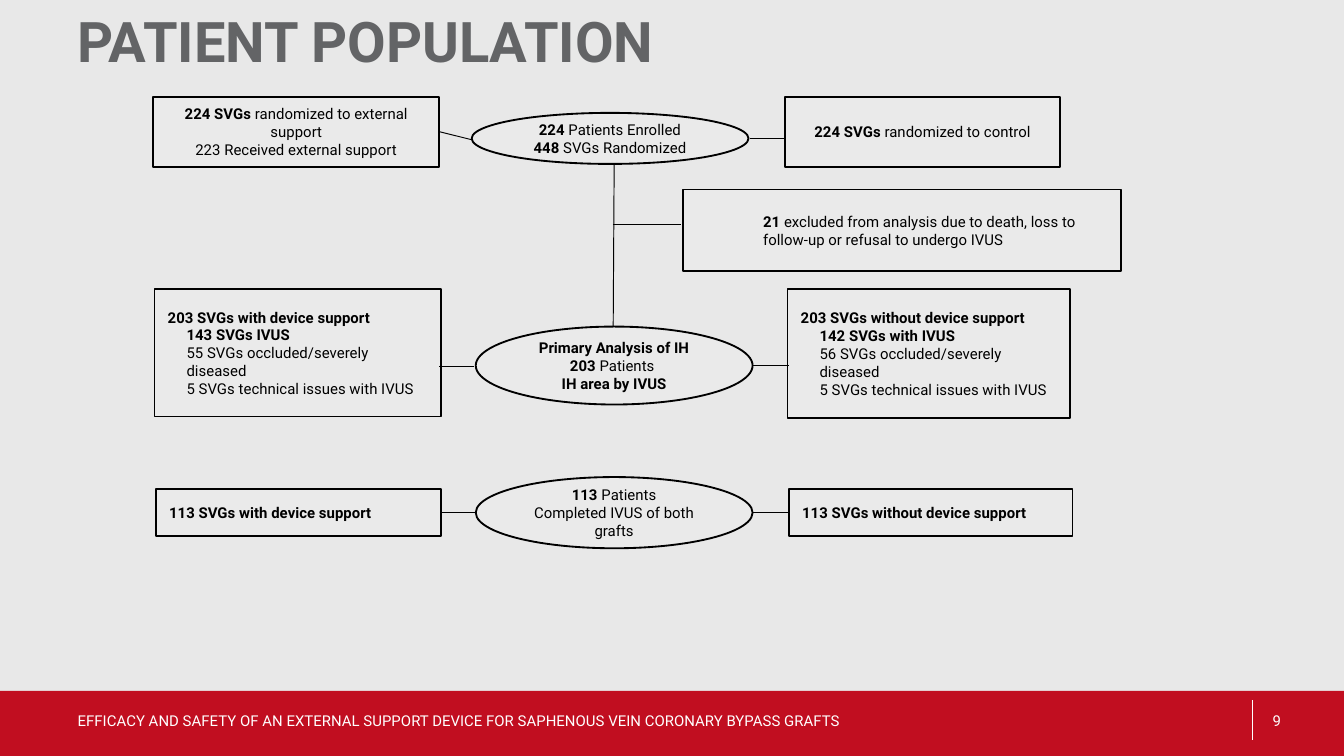
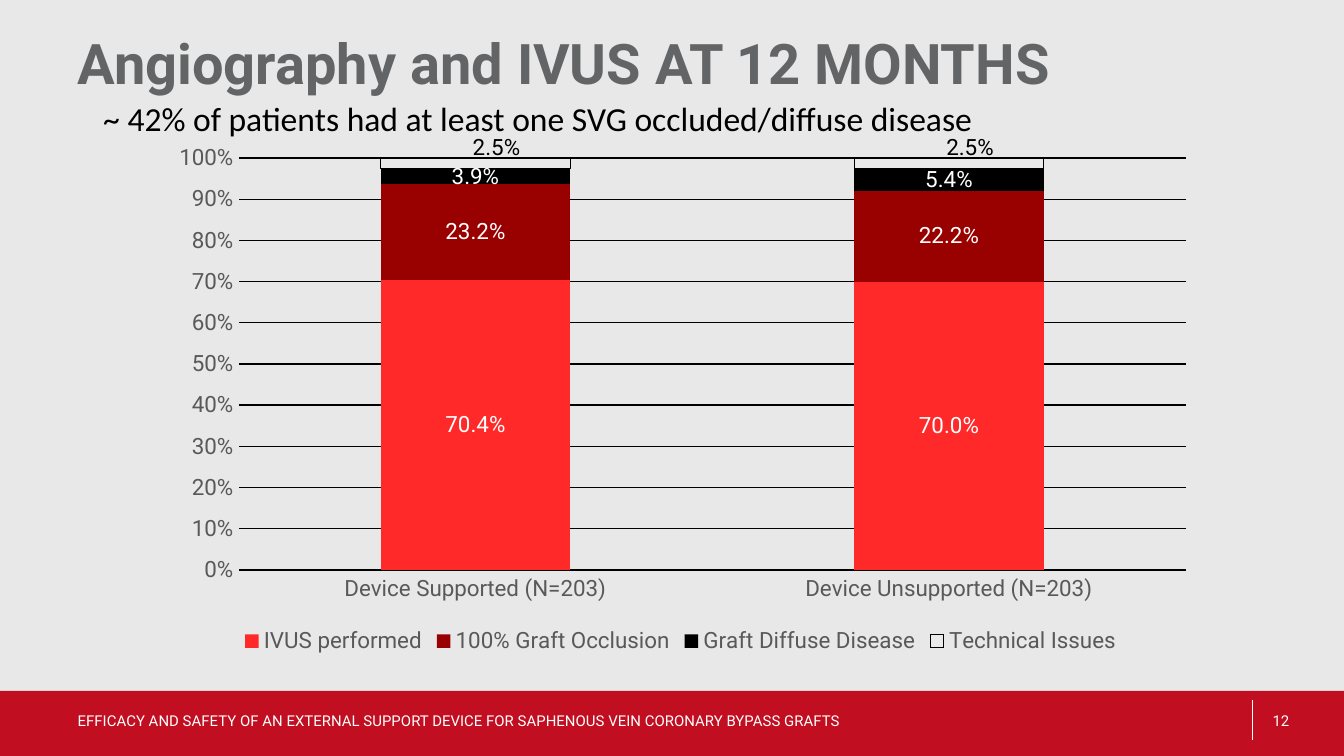
import pptx
import pptx.chart.data
import pptx.dml.color
import pptx.enum.chart
import pptx.enum.shapes
import pptx.enum.text
import pptx.oxml
import pptx.oxml.ns
import pptx.util

PX = 4572  # EMU per px, 200 px to the inch
WIDTH, HEIGHT = 2000, 1125
FONT = "Roboto"
BACKGROUND, BAND, TITLE = "E8E8E8", "C10E20", "636466"
NODE, BLACK, WHITE, AXIS_TEXT = "EAEAEA", "000000", "FFFFFF", "595959"
FOOTER = ("EFFICACY AND SAFETY OF AN EXTERNAL SUPPORT DEVICE FOR "
          "SAPHENOUS VEIN CORONARY BYPASS GRAFTS")
SHAPE = pptx.enum.shapes.MSO_SHAPE
ALIGN = pptx.enum.text.PP_ALIGN
ANCHOR = pptx.enum.text.MSO_ANCHOR
TOP, LEFT, BOTTOM, RIGHT = range(4)


def px(*lengths):
    return [pptx.util.Emu(n * PX) for n in lengths]


def rgb(value):
    return pptx.dml.color.RGBColor.from_string(value)


def style_font(font, size, color, name=FONT):
    font.size = pptx.util.Pt(size)
    font.name = name
    font.color.rgb = rgb(color)


def set_layout(parent, index, **fractions):
    """Place a chart part by hand, as fractions of the chart."""
    for old in parent.findall(pptx.oxml.ns.qn("c:layout")):
        parent.remove(old)
    parts = "".join(f'<c:{k} val="{v}"/>' for k, v in fractions.items())
    parent.insert(index, pptx.oxml.parse_xml(
        f'<c:layout {pptx.oxml.ns.nsdecls("c")}><c:manualLayout>{parts}'
        '</c:manualLayout></c:layout>'))


class Deck:
    def __init__(self):
        self.prs = pptx.Presentation()
        self.prs.slide_width, self.prs.slide_height = px(WIDTH, HEIGHT)
        self.s = None

    def slide(self, number, title, title_box):
        self.s = self.prs.slides.add_slide(self.prs.slide_layouts[6])
        fill = self.s.background.fill
        fill.solid()
        fill.fore_color.rgb = rgb(BACKGROUND)
        self.shape(SHAPE.RECTANGLE, (0, 1028, WIDTH, 97), BAND)
        self.line((1864, 1042), (1864, 1102), WHITE)
        p = self.text(title_box, title, 30, TITLE, anchor=ANCHOR.TOP)
        p.line_spacing = pptx.util.Pt(30)
        p.runs[0].font.bold = True
        self.text((96, 1042, 1204, 60), FOOTER, 8, WHITE)
        self.text((1874, 1042, 126, 60), str(number), 8, WHITE)

    def text(self, box, text, size, color, name=FONT, anchor=ANCHOR.MIDDLE, wrap=True):
        tf = self.s.shapes.add_textbox(*px(*box)).text_frame
        tf.word_wrap = wrap
        tf.vertical_anchor = anchor
        tf.text = text
        p = tf.paragraphs[0]
        style_font(p.runs[0].font, size, color, name)
        return p

    def shape(self, kind, box, color, outline=None):
        sp = self.s.shapes.add_shape(kind, *px(*box))
        sp.shadow.inherit = False
        sp.fill.solid()
        sp.fill.fore_color.rgb = rgb(color)
        if outline:
            sp.line.color.rgb = rgb(outline)
            sp.line.width = pptx.util.Pt(1)
        else:
            sp.line.fill.background()
        return sp

    def node(self, kind, box, lines, align=ALIGN.CENTER, first=0, rest=0):
        """Outlined flowchart node; *asterisks* mark bold, first and rest are indents."""
        sp = self.shape(kind, box, NODE, BLACK)
        tf = sp.text_frame
        tf.word_wrap = True
        tf.vertical_anchor = ANCHOR.MIDDLE
        for i, line in enumerate(lines):
            p = tf.add_paragraph() if i else tf.paragraphs[0]
            p.alignment = align
            p._p.get_or_add_pPr().set("marL", str((rest if i else first) * PX))
            for j, part in enumerate(line.split("*")):
                if part:
                    r = p.add_run()
                    r.text = part
                    r.font.bold = j % 2 == 1
                    style_font(r.font, 8, BLACK)
        return sp

    def oval(self, box, *lines):
        return self.node(SHAPE.OVAL, box, lines)

    def box(self, box, *lines, **options):
        return self.node(SHAPE.RECTANGLE, box, lines, **options)

    def line(self, start, end, color=BLACK, begin=None, finish=None):
        """Straight line; begin and finish are (shape, side) pairs to join."""
        c = self.s.shapes.add_connector(
            pptx.enum.shapes.MSO_CONNECTOR.STRAIGHT, *px(*start, *end))
        c.line.color.rgb = rgb(color)
        c.line.width = pptx.util.Pt(0.5)
        c._element.spPr.append(pptx.oxml.parse_xml(
            f'<a:effectLst {pptx.oxml.ns.nsdecls("a")}/>'))
        if begin:
            c.begin_connect(*begin)
        if finish:
            c.end_connect(*finish)

    def stacked_chart(self, box, categories, series):
        """100% stacked columns; series rows are name, values, fill, label colour."""
        data = pptx.chart.data.CategoryChartData(number_format="0.0%")
        data.categories = categories
        for name, values, _, _ in series:
            data.add_series(name, values)
        chart = self.s.shapes.add_chart(
            pptx.enum.chart.XL_CHART_TYPE.COLUMN_STACKED_100, *px(*box), data).chart
        chart.has_title = False
        style_font(chart.font, 12, BLACK)
        chart.has_legend = True
        chart.legend.position = pptx.enum.chart.XL_LEGEND_POSITION.BOTTOM
        chart.legend.include_in_layout = False
        style_font(chart.legend.font, 12, AXIS_TEXT)
        for axis in (chart.category_axis, chart.value_axis):
            axis.major_tick_mark = pptx.enum.chart.XL_TICK_MARK.NONE
            axis.minor_tick_mark = pptx.enum.chart.XL_TICK_MARK.NONE
            axis.format.line.fill.background()
            style_font(axis.tick_labels.font, 12, AXIS_TEXT)
        axis = chart.value_axis
        axis.minimum_scale, axis.maximum_scale, axis.major_unit = 0, 1, 0.1
        axis.tick_labels.number_format = "0%"
        axis.tick_labels.number_format_is_linked = False
        axis.has_major_gridlines = True
        grid = axis.major_gridlines.format.line
        grid.color.rgb = rgb(BLACK)
        grid.width = pptx.util.Pt(0.75)
        plot = chart.plots[0]
        plot.gap_width, plot.overlap = 150, 100
        plot.vary_by_categories = False
        for ser, (_, _, color, label_color) in zip(plot.series, series):
            ser.format.fill.solid()
            ser.format.fill.fore_color.rgb = rgb(color)
            labels = ser.data_labels
            labels.show_value = True
            labels.number_format = "0.0%"
            labels.number_format_is_linked = False
            style_font(labels.font, 12, label_color)
        set_layout(chart._chartSpace.chart.plotArea, 0, layoutTarget="inner",
                   xMode="edge", yMode="edge", x=0.08, y=0.05, w=0.9, h=0.78)
        return chart

    def outline_and_lift_labels(self, ser, count):
        """Outline a thin series and move its labels above the columns."""
        ser.format.line.color.rgb = rgb(BLACK)
        ser.format.line.width = pptx.util.Pt(0.75)
        for i in range(count):
            style_font(ser.points[i].data_label.font, 12, BLACK)
        for label in ser._element.xpath(".//c:dLbl"):
            set_layout(label, 1, x=0.02, y=-0.03)


def patient_population(deck):
    deck.slide(9, "PATIENT POPULATION", (96, 16, 1494, 202))
    deck.oval((702, 168, 412, 76), "*224* Patients Enrolled", "*448* SVGs Randomized")
    supported = deck.box((228, 144, 426, 104),
                         "*224 SVGs *randomized to external support",
                         "223 Received external support")
    deck.box((1168, 144, 410, 104), "*224 SVGs *randomized to control")
    deck.line((914, 244), (912, 574))

    listing = dict(align=ALIGN.LEFT, rest=28)
    deck.box((230, 430, 426, 190), "*203 SVGs with device support*", "*143 SVGs IVUS*",
             "55 SVGs occluded/severely diseased",
             "5 SVGs technical issues with IVUS", **listing)
    deck.oval((708, 486, 412, 116), "*Primary Analysis of IH*", "*203 *Patients ",
              "*IH area by IVUS*")
    deck.box((1172, 430, 420, 192), "*203 SVGs without device support*",
             "*142 SVGs with IVUS*", "56 SVGs occluded/severely diseased",
             "5 SVGs technical issues with IVUS", **listing)

    deck.oval((708, 710, 412, 106), "*113 *Patients", "Completed IVUS of both grafts")
    completed = deck.box((232, 728, 424, 70), "*113 SVGs with device support*", **listing)
    unsupported = deck.box((1174, 728, 422, 70), "*113 SVGs without device support*",
                           **listing)
    deck.box((1016, 282, 652, 122),
             "*21* excluded from analysis due to death, loss to follow-up "
             "or refusal to undergo IVUS", align=ALIGN.LEFT, first=100)

    deck.line((654, 196), (702, 208), begin=(supported, RIGHT))
    deck.line((1116, 206), (1168, 206))
    deck.line((912, 334), (1014, 334))
    deck.line((654, 546), (706, 546))
    deck.line((1120, 544), (1174, 544))
    deck.line((656, 763), (710, 763), begin=(completed, RIGHT))
    deck.line((1120, 763), (1174, 763), finish=(unsupported, LEFT))


def angiography(deck):
    deck.slide(12, "Angiography and IVUS AT 12 MONTHS", (96, 50, 1700, 202))
    categories = ["Device Supported (N=203)", "Device Unsupported (N=203)"]
    chart = deck.stacked_chart((230, 196, 1566, 786), categories, [
        ("IVUS performed", (0.704, 0.7), "FF2929", WHITE),
        ("100% Graft Occlusion", (0.232, 0.222), "990000", WHITE),
        ("Graft Diffuse Disease", (0.039, 0.054), BLACK, WHITE),
        ("Technical Issues", (0.025, 0.025), NODE, BLACK),
    ])
    deck.outline_and_lift_labels(chart.plots[0].series[3], len(categories))
    deck.text((134, 136, 1352, 80),
              "~ 42% of patients had at least one SVG occluded/diffuse disease",
              18, BLACK, "Calibri", ANCHOR.TOP, wrap=False)


def main():
    deck = Deck()
    patient_population(deck)
    angiography(deck)
    deck.prs.save("out.pptx")


if __name__ == "__main__":
    main()
